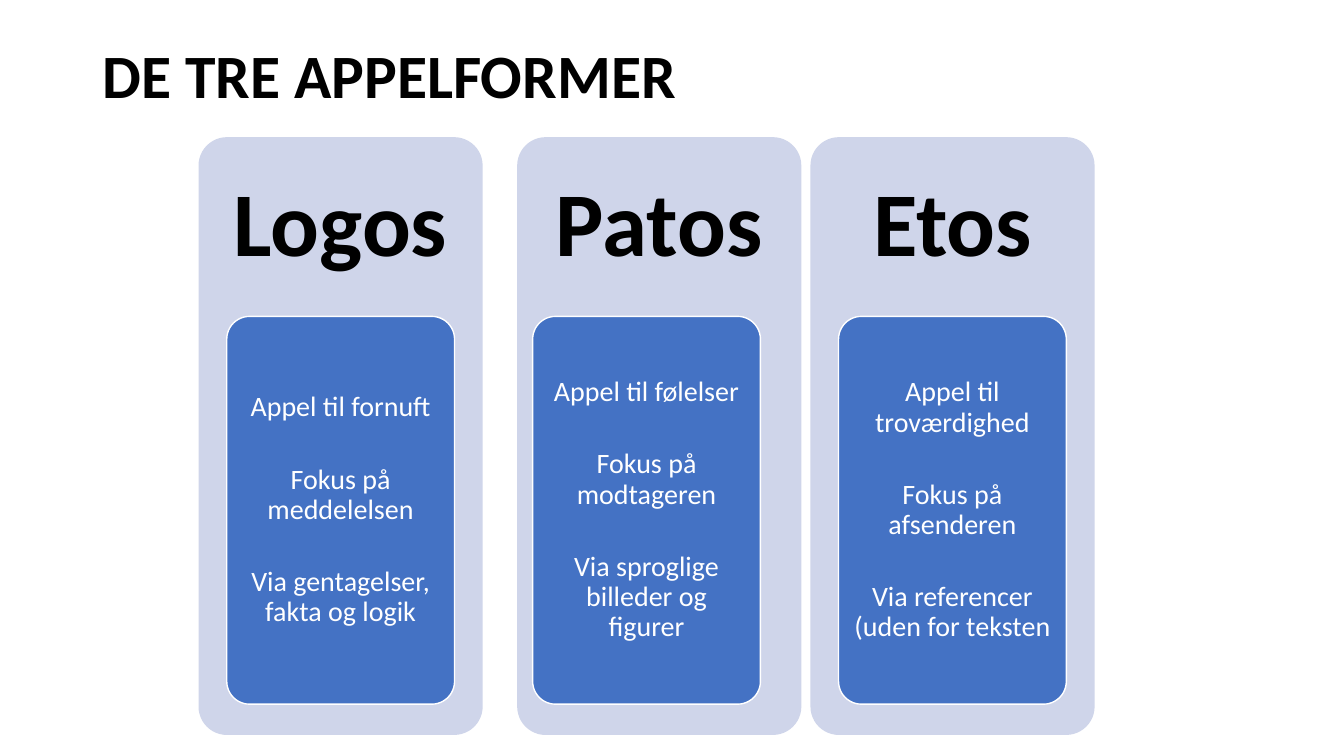
"""Builds the slide on the three modes of appeal: logos, patos and etos."""
from pptx import Presentation
from pptx.dml.color import RGBColor
from pptx.enum.shapes import MSO_SHAPE as Shape
from pptx.enum.text import MSO_ANCHOR as Anchor, PP_ALIGN as Align
from pptx.util import Pt

FONT = "Calibri"
BLACK, WHITE, PALE_BLUE, BLUE = "000000", "FFFFFF", "CFD5EA", "4472C4"

COLUMN_TOP, COLUMN_WIDTH, COLUMN_HEIGHT = 98, 203, 427
HEADING_HEIGHT = 128
CARD_LEFT, CARD_STEP = 162, 218.5
CARD_TOP, CARD_WIDTH, CARD_HEIGHT = 226, 162.7, 277

APPEALS = [
    (141.8, "Logos", ["Appel til fornuft", "Fokus på meddelelsen",
                      "Via gentagelser, fakta og logik"]),
    (369.4, "Patos", ["Appel til følelser", "Fokus på modtageren",
                      "Via sproglige billeder og figurer"]),
    (578.9, "Etos", ["Appel til troværdighed", "Fokus på afsenderen",
                     "Via referencer (uden for teksten"]),
]


def colour(value):
    """Return the colour for a hex string."""
    return RGBColor.from_string(value)


def write(holder, lines, *, size, ink, bold=False, align=Align.CENTER,
          anchor=Anchor.MIDDLE, margins=(7.2, 3.6), gap=0):
    """Fill a shape with formatted paragraphs, a gap between each two."""
    frame = holder.text_frame
    frame.word_wrap = True
    frame.vertical_anchor = anchor
    frame.margin_left = frame.margin_right = Pt(margins[0])
    frame.margin_top = frame.margin_bottom = Pt(margins[1])
    frame.text = "\n".join(lines)
    for index, paragraph in enumerate(frame.paragraphs):
        paragraph.alignment = align
        paragraph.line_spacing = 0.9
        paragraph.space_before = Pt(gap if index else 0)
        font = paragraph.runs[0].font
        font.name, font.size, font.bold = FONT, Pt(size), bold
        font.color.rgb = colour(ink)


def add_panel(slide, left, top, width, height, fill, outline=None):
    """Add a rounded panel, with an outline if a colour is given."""
    panel = slide.shapes.add_shape(
        Shape.ROUNDED_RECTANGLE, Pt(left), Pt(top), Pt(width), Pt(height))
    panel.adjustments[0] = 0.1
    panel.shadow.inherit = False
    panel.fill.solid()
    panel.fill.fore_color.rgb = colour(fill)
    if outline:
        panel.line.color.rgb = colour(outline)
        panel.line.width = Pt(1)
    else:
        panel.line.fill.background()
    return panel


def add_title(slide, text):
    """Place and format the title placeholder."""
    title = slide.shapes.title
    title.left, title.top = Pt(66), Pt(28.8)
    title.width, title.height = Pt(828), Pt(104.4)
    write(title, [text], size=44, ink=BLACK, bold=True,
          align=Align.LEFT, anchor=Anchor.TOP)


def add_appeal(slide, column_left, card_left, name, points):
    """Add one column with its heading and its card of points."""
    add_panel(slide, column_left, COLUMN_TOP, COLUMN_WIDTH, COLUMN_HEIGHT,
              PALE_BLUE)
    heading = slide.shapes.add_textbox(
        Pt(column_left), Pt(COLUMN_TOP), Pt(COLUMN_WIDTH), Pt(HEADING_HEIGHT))
    write(heading, [name], size=65, ink=BLACK, bold=True, margins=(19.5, 19.5))
    card = add_panel(slide, card_left, CARD_TOP, CARD_WIDTH, CARD_HEIGHT,
                     BLUE, outline=WHITE)
    write(card, points, size=20, ink=WHITE, margins=(4.3, 2.9), gap=30)


def main():
    """Build and save the slide."""
    deck = Presentation()
    deck.slide_width, deck.slide_height = Pt(960), Pt(540)
    slide = deck.slides.add_slide(deck.slide_layouts.get_by_name("Title Only"))
    add_title(slide, "DE TRE APPELFORMER")
    for index, (column_left, name, points) in enumerate(APPEALS):
        add_appeal(slide, column_left, CARD_LEFT + index * CARD_STEP,
                   name, points)
    deck.save("out.pptx")


if __name__ == "__main__":
    main()
